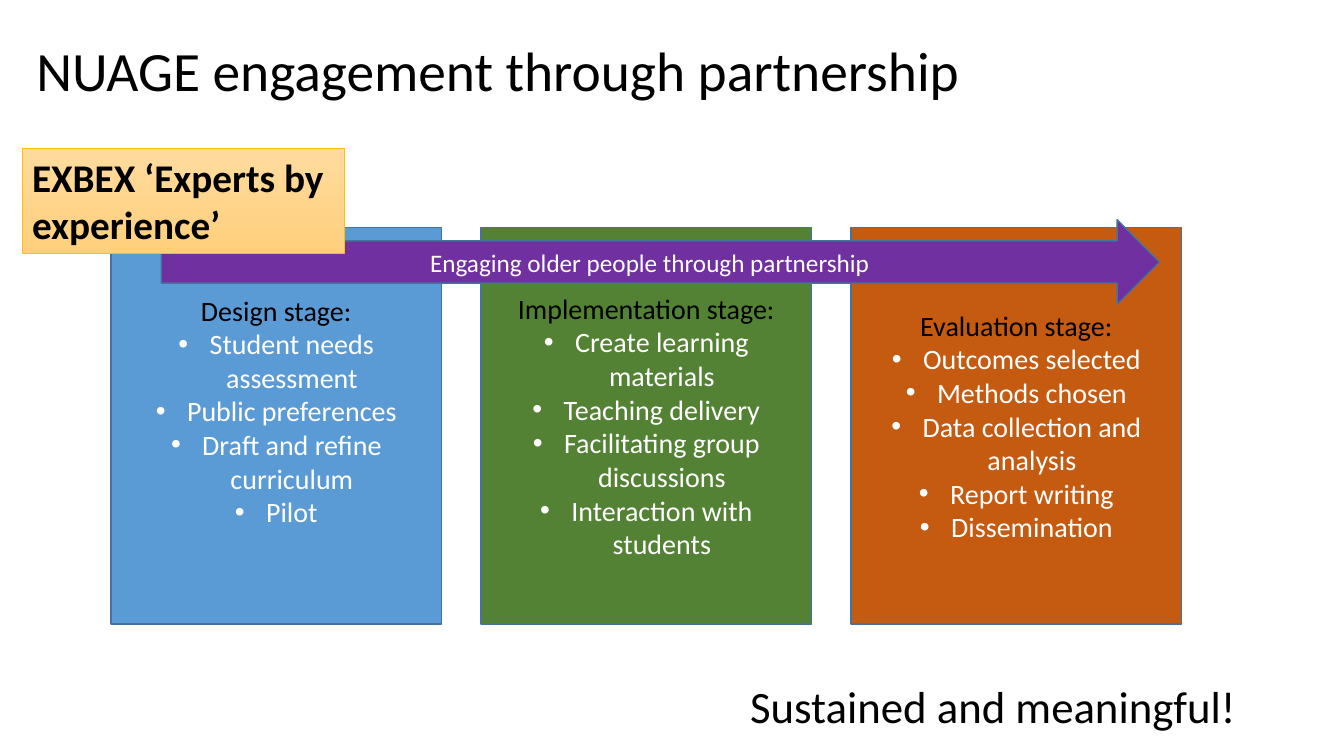
from dataclasses import dataclass

from lxml.etree import SubElement
from pptx import Presentation
from pptx.dml.color import RGBColor
from pptx.enum.shapes import MSO_SHAPE
from pptx.enum.text import MSO_ANCHOR, MSO_AUTO_SIZE, PP_ALIGN
from pptx.oxml.ns import qn
from pptx.shapes.autoshape import Shape
from pptx.slide import Slide
from pptx.text.text import TextFrame, _Paragraph
from pptx.util import Inches, Pt

FONT = "Calibri"
BLACK = "000000"
WHITE = "FFFFFF"
OUTLINE = "43739E"
CARD_LEFT, CARD_TOP, CARD_STEP = 1.1, 2.26, 3.67
CARD_WIDTH, CARD_HEIGHT = 3.28, 3.93
BULLET_INDENT = 0.31


@dataclass
class Stage:
    heading: str
    fill: str
    items: list[str]
    bottom_margin: float = 0.05


STAGES = [
    Stage("Design stage:", "5B9BD5",
          ["Student needs assessment", "Public preferences",
           "Draft and refine curriculum", "Pilot"], bottom_margin=0.35),
    Stage("Implementation stage:", "548235",
          ["Create learning materials", "Teaching delivery",
           "Facilitating group discussions", "Interaction with students"]),
    Stage("Evaluation stage:", "C55A11",
          ["Outcomes selected", "Methods chosen", "Data collection and analysis",
           "Report writing", "Dissemination"]),
]


def color(value: str) -> RGBColor:
    return RGBColor.from_string(value)


def add_run(paragraph: _Paragraph, text: str, size: float,
            text_color: str = BLACK, bold: bool = False) -> None:
    run = paragraph.add_run()
    run.text = text
    run.font.name = FONT
    run.font.size = Pt(size)
    run.font.bold = bold
    run.font.color.rgb = color(text_color)


def add_bullet(paragraph: _Paragraph) -> None:
    properties = paragraph._p.get_or_add_pPr()
    properties.set("marL", str(Inches(BULLET_INDENT)))
    properties.set("indent", str(-Inches(BULLET_INDENT)))
    SubElement(properties, qn("a:buFont")).set("typeface", "Arial")
    SubElement(properties, qn("a:buChar")).set("char", "•")


def add_block(slide: Slide, kind: MSO_SHAPE, left: float, top: float, width: float,
              height: float, line: str = OUTLINE, line_width: float = 1) -> Shape:
    shape = slide.shapes.add_shape(
        kind, Inches(left), Inches(top), Inches(width), Inches(height))
    shape.shadow.inherit = False
    shape.line.color.rgb = color(line)
    shape.line.width = Pt(line_width)
    shape.text_frame.word_wrap = True
    shape.text_frame.vertical_anchor = MSO_ANCHOR.MIDDLE
    return shape


def fill_solid(shape: Shape, value: str) -> None:
    shape.fill.solid()
    shape.fill.fore_color.rgb = color(value)


def first_paragraph(frame: TextFrame, alignment: PP_ALIGN) -> _Paragraph:
    paragraph = frame.paragraphs[0]
    paragraph.alignment = alignment
    return paragraph


def add_stage(slide: Slide, stage: Stage, left: float) -> None:
    card = add_block(slide, MSO_SHAPE.RECTANGLE, left, CARD_TOP, CARD_WIDTH, CARD_HEIGHT)
    fill_solid(card, stage.fill)
    frame = card.text_frame
    frame.margin_bottom = Inches(stage.bottom_margin)
    add_run(first_paragraph(frame, PP_ALIGN.CENTER), stage.heading, 20)
    for item in stage.items:
        paragraph = frame.add_paragraph()
        paragraph.alignment = PP_ALIGN.CENTER
        add_bullet(paragraph)
        add_run(paragraph, item, 20, WHITE)


def add_title(slide: Slide) -> None:
    title = slide.shapes.title
    title.left, title.top = Inches(0), Inches(0)
    title.width, title.height = Inches(11.5), Inches(1.45)
    frame = title.text_frame
    frame.auto_size = MSO_AUTO_SIZE.NONE
    frame.vertical_anchor = MSO_ANCHOR.MIDDLE
    frame.margin_left = Inches(0.36)
    paragraph = first_paragraph(frame, PP_ALIGN.LEFT)
    paragraph.line_spacing = 0.9
    add_run(paragraph, "NUAGE engagement through partnership", 39.6)


def add_arrow(slide: Slide) -> None:
    arrow = add_block(slide, MSO_SHAPE.RIGHT_ARROW, 1.6, 2.18, 9.9, 0.84)
    fill_solid(arrow, "7030A0")
    add_run(first_paragraph(arrow.text_frame, PP_ALIGN.CENTER),
            "Engaging older people through partnership", 18, WHITE)


def add_experts_label(slide: Slide) -> None:
    label = add_block(slide, MSO_SHAPE.RECTANGLE, 0.22, 1.47, 3.2, 1.04, "FFC000", 0.5)
    label.fill.gradient()
    label.fill.gradient_angle = 270
    for stop, value in zip(label.fill.gradient_stops, ("FFDB9E", "FFD07C")):
        stop.color.rgb = color(value)
    label.text_frame.vertical_anchor = MSO_ANCHOR.TOP
    label.text_frame.auto_size = MSO_AUTO_SIZE.SHAPE_TO_FIT_TEXT
    add_run(first_paragraph(label.text_frame, PP_ALIGN.LEFT),
            "EXBEX ‘Experts by experience’", 28, bold=True)


def add_closing(slide: Slide) -> None:
    closing = slide.shapes.add_textbox(
        Inches(7.34), Inches(6.68), Inches(5.08), Inches(0.64))
    closing.text_frame.word_wrap = False
    closing.text_frame.auto_size = MSO_AUTO_SIZE.SHAPE_TO_FIT_TEXT
    add_run(first_paragraph(closing.text_frame, PP_ALIGN.LEFT),
            "Sustained and meaningful!", 32)


def main() -> None:
    presentation = Presentation()
    presentation.slide_width = Inches(13.33)
    presentation.slide_height = Inches(7.5)
    slide = presentation.slides.add_slide(presentation.slide_layouts[5])

    # Title
    add_title(slide)

    # Stage cards, evenly spaced
    for index, stage in enumerate(STAGES):
        add_stage(slide, stage, CARD_LEFT + index * CARD_STEP)

    # Arrow and label across the cards, then the closing line
    add_arrow(slide)
    add_experts_label(slide)
    add_closing(slide)

    presentation.save("out.pptx")


if __name__ == "__main__":
    main()
